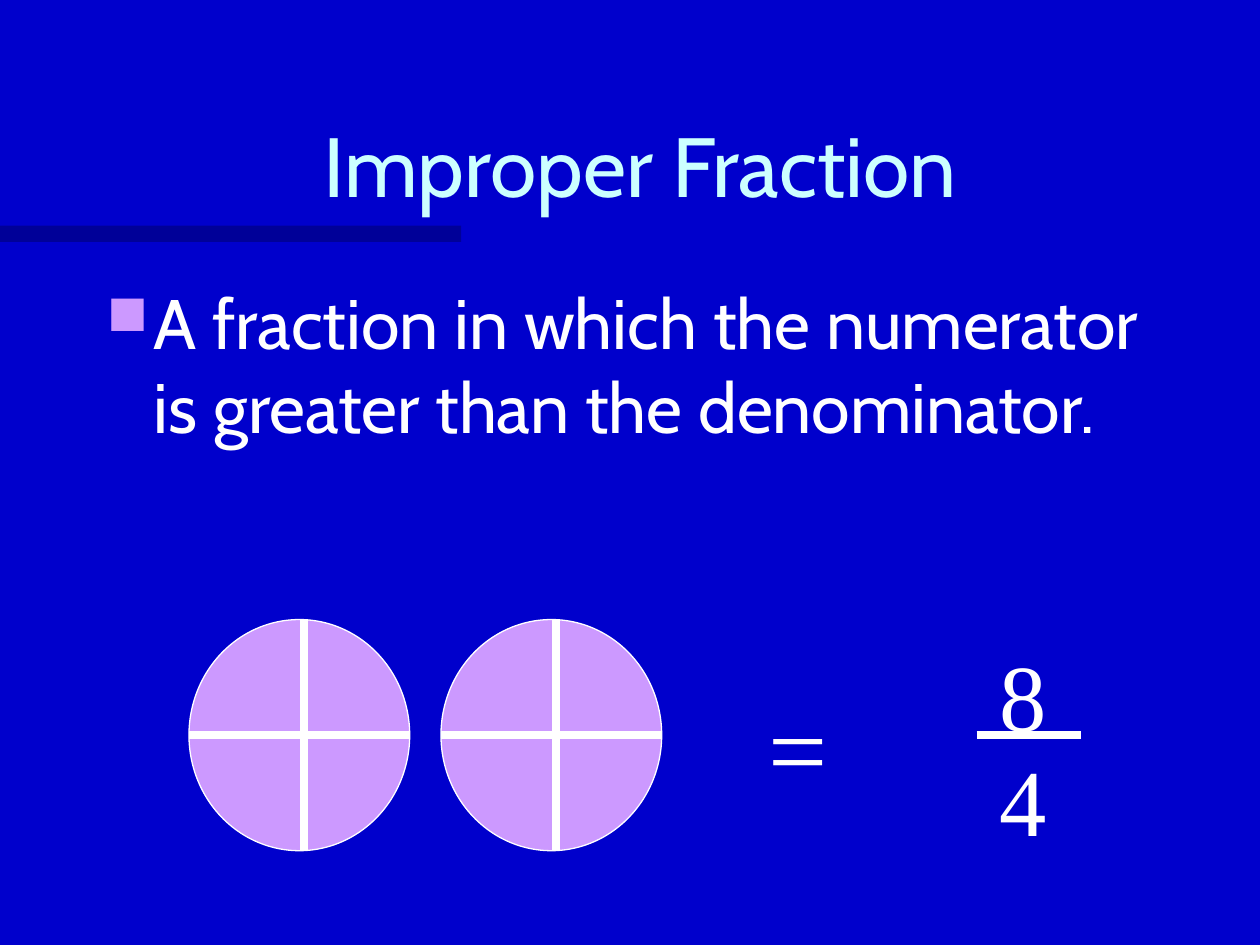
from dataclasses import dataclass

from lxml import etree
from pptx import Presentation
from pptx.dml.color import RGBColor
from pptx.enum import shapes, text
from pptx.oxml.ns import qn
from pptx.util import Cm, Pt


@dataclass(frozen=True)
class Theme:
    background: str = "0000CC"
    band: str = "000066"
    title: str = "CCFFFF"
    body: str = "FFFFFF"
    accent: str = "CC99FF"
    sans: str = "Cabin"
    serif: str = "Times New Roman"
    title_size: int = 48
    body_size: int = 40
    digit_size: int = 54
    equals_size: int = 60
    outline: float = 0.75
    stroke: float = 4.5


def add_element(parent, tag, **attributes):
    return etree.SubElement(parent, qn(tag), attributes)


class SlideBuilder:
    def __init__(self, slide, theme):
        self.slide = slide
        self.theme = theme
        fill = slide.background.fill
        fill.solid()
        fill.fore_color.rgb = RGBColor.from_string(theme.background)

    def shape(self, kind, left, top, width, height, color, outline=None, alpha=None):
        shape = self.slide.shapes.add_shape(
            kind, Cm(left), Cm(top), Cm(width), Cm(height))
        shape.shadow.inherit = False
        shape.fill.solid()
        shape.fill.fore_color.rgb = RGBColor.from_string(color)
        if alpha is not None:
            color_element = shape.fill._xPr.find(qn("a:solidFill"))[0]
            add_element(color_element, "a:alpha", val=str(alpha * 1000))
        if outline:
            shape.line.color.rgb = RGBColor.from_string(outline)
            shape.line.width = Pt(self.theme.outline)
        else:
            shape.line.fill.background()

    def line(self, x1, y1, x2, y2):
        line = self.slide.shapes.add_connector(
            shapes.MSO_CONNECTOR.STRAIGHT, Cm(x1), Cm(y1), Cm(x2), Cm(y2))
        line.line.color.rgb = RGBColor.from_string(self.theme.body)
        line.line.width = Pt(self.theme.stroke)
        add_element(line._element.spPr, "a:effectLst")

    def text(self, content, left, top, width, height, font, size, color,
             align=text.PP_ALIGN.LEFT, anchor=text.MSO_ANCHOR.TOP,
             wrap=True, inset_top=0.13, bullet=False):
        box = self.slide.shapes.add_textbox(Cm(left), Cm(top), Cm(width), Cm(height))
        frame = box.text_frame
        frame.text = content
        frame.word_wrap = wrap
        frame.vertical_anchor = anchor
        frame.margin_top = Cm(inset_top)
        paragraph = frame.paragraphs[0]
        paragraph.alignment = align
        if bullet:
            self.bullet(paragraph)
        run_font = paragraph.runs[0].font
        run_font.name = font
        run_font.size = Pt(size)
        run_font.color.rgb = RGBColor.from_string(color)

    def bullet(self, paragraph):
        properties = paragraph._p.get_or_add_pPr()
        indent = Cm(0.95)
        properties.set("marL", str(indent))
        properties.set("indent", str(-indent))
        bullet_color = add_element(properties, "a:buClr")
        add_element(bullet_color, "a:srgbClr", val=self.theme.accent)
        add_element(properties, "a:buSzPct", val="80000")
        add_element(properties, "a:buChar", char="■")

    def quartered_circle(self, left, top, width, height):
        self.shape(shapes.MSO_SHAPE.OVAL, left, top, width, height,
                   self.theme.accent, outline=self.theme.body)
        middle_x = left + width / 2 + 0.1
        middle_y = top + height / 2
        self.line(middle_x, top, middle_x, top + height)
        self.line(left, middle_y, left + width, middle_y)


def main():
    theme = Theme()
    presentation = Presentation()
    presentation.slide_width = Cm(25.4)
    presentation.slide_height = Cm(19.05)
    slide = presentation.slides.add_slide(presentation.slide_layouts[6])
    builder = SlideBuilder(slide, theme)

    builder.shape(shapes.MSO_SHAPE.RECTANGLE, 0, 4.55, 9.3, 0.33, theme.band, alpha=50)
    builder.text("Improper Fraction", 2.11, 1.27, 21.59, 3.18,
                 theme.sans, theme.title_size, theme.title,
                 align=text.PP_ALIGN.CENTER, anchor=text.MSO_ANCHOR.BOTTOM)
    builder.text("A fraction in which the numerator is greater than the denominator.",
                 1.9, 5.51, 21.59, 5.72, theme.sans, theme.body_size, theme.body,
                 bullet=True)

    circle_top, circle_height = 12.49, 4.66
    for left in (3.81, 8.89):
        builder.quartered_circle(left, circle_top, 4.45, circle_height)

    builder.text("=", 15.24, 13.55, 1.7, 2.79, theme.serif, theme.equals_size,
                 theme.body, wrap=False, inset_top=0.2)
    for digit, top, height in (("8", 12.49, 2.54), ("4", 14.6, 3.56)):
        builder.text(digit, 19.9, top, 1.48, height, theme.serif, theme.digit_size,
                     theme.body, wrap=False, inset_top=0.35)
    bar_y = circle_top + circle_height / 2
    builder.line(19.69, bar_y, 21.8, bar_y)

    presentation.save("out.pptx")


if __name__ == "__main__":
    main()
